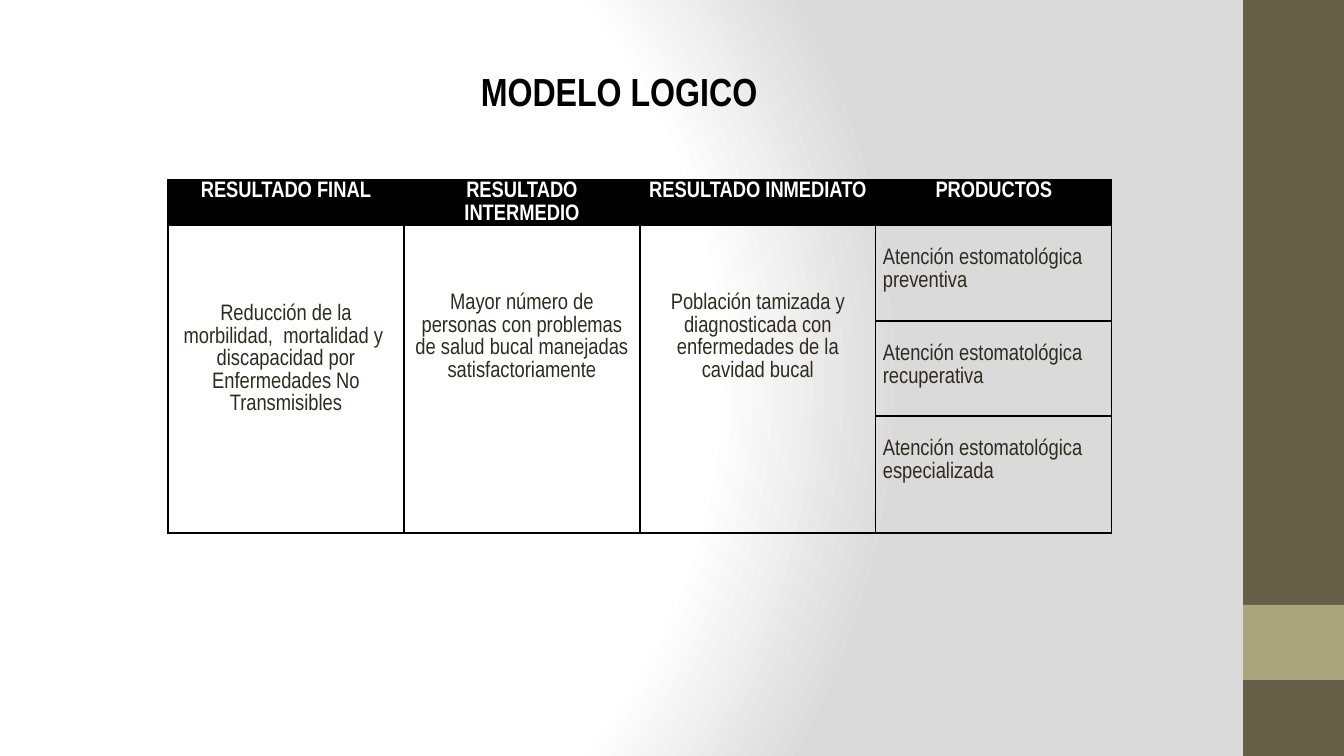
import pptx
import pptx.util
import pptx.oxml
import pptx.dml.color
import pptx.enum.shapes
import pptx.enum.text

RGB = pptx.dml.color.RGBColor
ALIGN = pptx.enum.text.PP_ALIGN
NS = "http://schemas.openxmlformats.org/drawingml/2006/main"

# Content
TITLE = "MODELO LOGICO"
HEADS = ["RESULTADO FINAL", "RESULTADO INTERMEDIO", "RESULTADO INMEDIATO", "PRODUCTOS"]
# Text and its distance from the cell top, in px
RESULTS = [
    ("Reducción de la morbilidad,  mortalidad y  discapacidad por "
     "Enfermedades No Transmisibles", 78),
    ("Mayor número de personas con problemas de salud bucal manejadas "
     "satisfactoriamente", 67),
    ("Población tamizada y diagnosticada con enfermedades de la cavidad bucal", 67),
]
PRODUCTS = [
    "Atención estomatológica preventiva",
    "Atención estomatológica recuperativa",
    "Atención estomatológica especializada",
]

# Style
FONT = "Arial Narrow"
BLACK = RGB(0x00, 0x00, 0x00)
WHITE = RGB(0xFF, 0xFF, 0xFF)
INK = RGB(0x2F, 0x2B, 0x20)
BROWN = RGB(0x67, 0x5E, 0x47)
OLIVE = RGB(0xA9, 0xA5, 0x7C)
GREY = RGB(0xDA, 0xDA, 0xDA)
STOPS = [(0, WHITE), (75, WHITE), (100, GREY)]

# Layout in px
WIDE, HIGH = 1344, 756
BARS = [(1243, 0, 101, HIGH, BROWN), (1243, 605, 101, 75, OLIVE)]
LEFT, TOP, COL = 168, 180, 236
ROWS = [45, 96, 95, 117]
PAD, DROP = 7, 22


def px(n):
    return pptx.util.Emu(round(n * 914400 / 100.8))


def write(par, text, size, color, bold, align):
    par.alignment = align
    par.line_spacing = 1.07
    run = par.add_run()
    run.text = text
    font = run.font
    font.name, font.size, font.bold = FONT, pptx.util.Pt(size), bold
    font.color.rgb = color


def border(cell):
    props = cell._tc.get_or_add_tcPr()
    for i, side in enumerate(("lnL", "lnR", "lnT", "lnB")):
        props.insert(i, pptx.oxml.parse_xml(
            f'<a:{side} xmlns:a="{NS}" w="12700"><a:solidFill>'
            f'<a:srgbClr val="{BLACK}"/></a:solidFill></a:{side}>'))


def fill_cell(cell, text, top, color, bold, align):
    cell.margin_top = px(top)
    write(cell.text_frame.paragraphs[0], text, 16, color, bold, align)


deck = pptx.Presentation()
deck.slide_width, deck.slide_height = px(WIDE), px(HIGH)
slide = deck.slides.add_slide(deck.slide_layouts[6])

# Radial background
stops = "".join(f'<a:gs pos="{pos * 1000}"><a:srgbClr val="{color}"/></a:gs>'
                for pos, color in STOPS)
slide.background.fill.solid()
props = slide.element.cSld.bg.bgPr
solid = props[0]
props.replace(solid, pptx.oxml.parse_xml(
    f'<a:gradFill xmlns:a="{NS}" rotWithShape="1"><a:gsLst>{stops}</a:gsLst>'
    '<a:path path="circle"><a:fillToRect l="20000" t="50000" r="100000" b="50000"/>'
    '</a:path></a:gradFill>'))

# Side bars
for x, y, w, h, color in BARS:
    bar = slide.shapes.add_shape(
        pptx.enum.shapes.MSO_SHAPE.RECTANGLE, px(x), px(y), px(w), px(h))
    bar.shadow.inherit = False
    bar.fill.solid()
    bar.fill.fore_color.rgb = color
    bar.line.fill.background()

# Table grid
table = slide.shapes.add_table(
    len(ROWS), len(HEADS), px(LEFT), px(TOP), px(COL * len(HEADS)), px(sum(ROWS))).table
table.first_row = table.horz_banding = False
for col in table.columns:
    col.width = px(COL)
for row, high in zip(table.rows, ROWS):
    row.height = px(high)
for cell in table.iter_cells():
    cell.margin_left = cell.margin_right = px(PAD)
    cell.margin_top = cell.margin_bottom = 0
    cell.fill.background()
    border(cell)

# Table text
for c, head in enumerate(HEADS):
    cell = table.cell(0, c)
    cell.fill.solid()
    cell.fill.fore_color.rgb = BLACK
    fill_cell(cell, head, 0, WHITE, True, ALIGN.CENTER)
for c, (text, top) in enumerate(RESULTS):
    cell = table.cell(1, c)
    cell.merge(table.cell(len(PRODUCTS), c))
    fill_cell(cell, text, top, INK, False, ALIGN.CENTER)
for r, text in enumerate(PRODUCTS, 1):
    fill_cell(table.cell(r, len(RESULTS)), text, DROP, INK, False, ALIGN.LEFT)

# Title
frame = slide.shapes.add_textbox(px(305), px(59), px(628), px(58)).text_frame
frame.word_wrap = True
par = frame.paragraphs[0]
par.space_before = par.space_after = pptx.util.Pt(6)
write(par, TITLE, 28, BLACK, True, ALIGN.CENTER)

deck.save("out.pptx")
